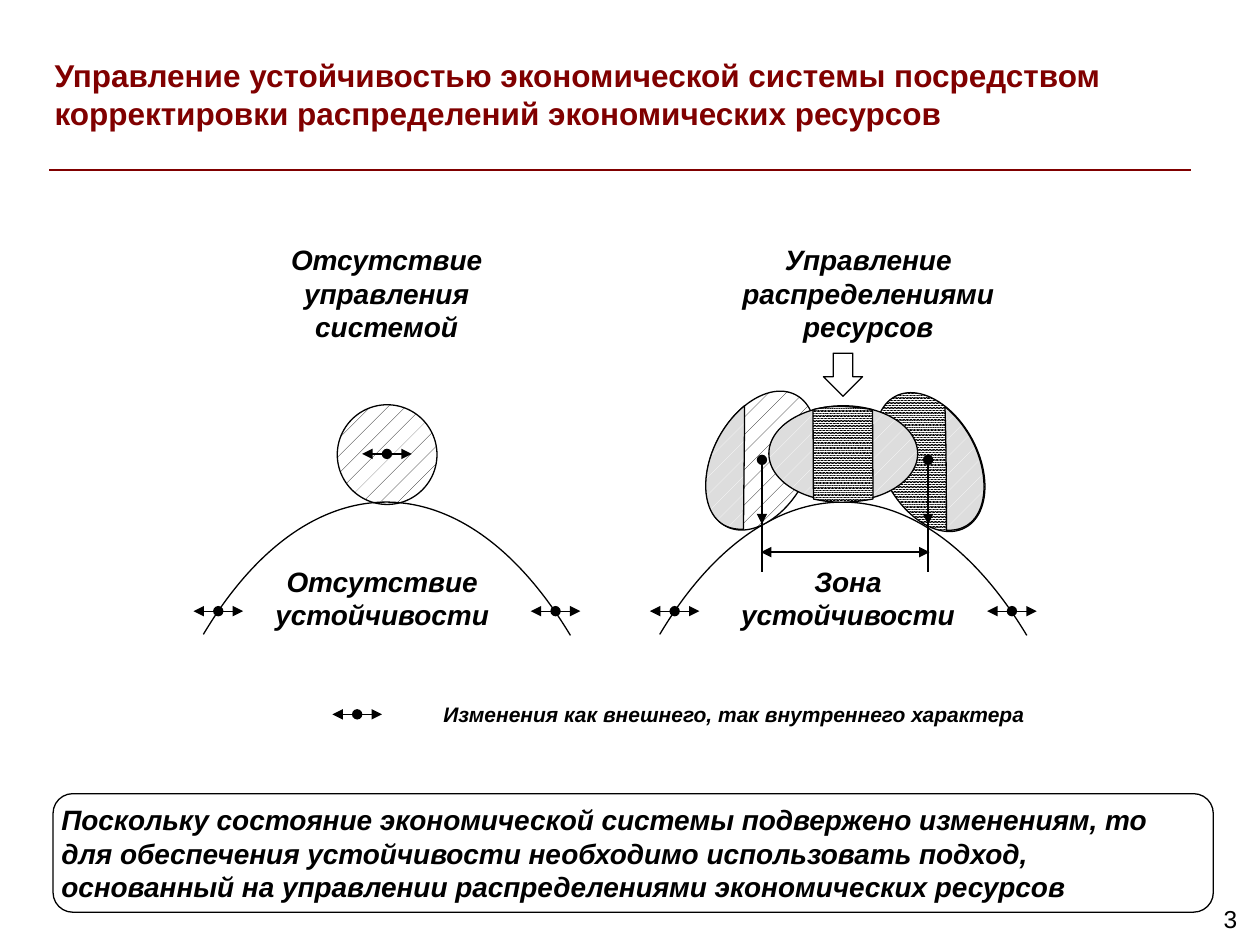
from lxml import etree
from pptx import Presentation
from pptx.dml.color import RGBColor
from pptx.enum.dml import MSO_PATTERN
from pptx.enum.shapes import MSO_CONNECTOR, MSO_SHAPE
from pptx.enum.text import MSO_ANCHOR, PP_ALIGN
from pptx.oxml.ns import qn
from pptx.util import Cm, Pt

C = {"title": "800000", "ink": "000000", "paper": "FFFFFF", "grey": "DDDDDD"}
C = {name: RGBColor.from_string(value) for name, value in C.items()}
STYLES = {
    "light": (MSO_PATTERN.PERCENT_5, "ink", "paper"),
    "dark": (MSO_PATTERN.PERCENT_90, "paper", "ink"),
    "grey": (MSO_PATTERN.PERCENT_5, "paper", "grey"),
}


def finish(sp, style=None):
    sp.shadow.inherit = False
    sp.line.color.rgb = C["ink"]
    sp.line.width = Pt(0.75)
    if style:
        pattern, fore, back = STYLES[style]
        sp.fill.patterned()
        sp.fill.pattern = pattern
        sp.fill.fore_color.rgb = C[fore]
        sp.fill.back_color.rgb = C[back]
    else:
        sp.fill.background()


def add_line(x1, y1, x2, y2, color="ink", width=0.75, head=None, tail=None):
    ln = s.shapes.add_connector(MSO_CONNECTOR.STRAIGHT, Cm(x1), Cm(y1), Cm(x2), Cm(y2))
    ln.line.color.rgb = C[color]
    ln.line.width = Pt(width)
    for tag, kind in (("a:headEnd", head), ("a:tailEnd", tail)):
        if kind:
            etree.SubElement(ln.line._get_or_add_ln(), qn(tag), type=kind)
    etree.SubElement(ln._element.spPr, qn("a:effectLst"))


prs = Presentation()
prs.slide_width, prs.slide_height = Cm(25.4), Cm(19.05)
s = prs.slides.add_slide(prs.slide_layouts[6])

add_line(0.99, 3.43, 24, 3.43, "title", 1.5)

ellipses = [
    (17.25, 8.35, 3, 1.93, 62, "dark"),
    (6.8, 8.16, 2.01, 2.01, 0, "light"),
    (13.84, 8.32, 3, 1.93, 298, "light"),
    (15.5, 8.18, 3, 1.93, 0, "grey"),
]
hills = [
    (None, (x, 12.79), [[(x + 2.1, 9.27), (x + 5.22, 9.19), (x + 7.4, 12.81)]])
    for x in (4.1, 13.3)
]
bands = [
    ("dark", (16.39, 8.26), [
        [(16.79, 8.15), (17.22, 8.2), (17.59, 8.26)],
        [(17.6, 10.06)],
        [(17.2, 10.13), (16.84, 10.16), (16.4, 10.06)],
        [(16.39, 8.26)]]),
    ("grey", (19.05, 8.2), [
        [(19.08, 9.04), (19.08, 10.11), (19.08, 10.69)],
        [(20.12, 10.74), (20.07, 9.04), (19.05, 8.2)]]),
    ("grey", (15.01, 8.18), [
        [(15.01, 8.99), (14.99, 10.08), (14.99, 10.67)],
        [(13.94, 10.72), (14, 9.02), (15.01, 8.18)]]),
]

for item in ellipses[:2] + hills + ellipses[2:] + bands:
    if item in ellipses:
        x, y, w, h, angle, style = item
        sp = s.shapes.add_shape(MSO_SHAPE.OVAL, Cm(x), Cm(y), Cm(w), Cm(h))
        sp.rotation = angle
    else:
        style, start, segments = item
        fb = s.shapes.build_freeform(Cm(start[0]), Cm(start[1]))
        points = [(Cm(x), Cm(y)) for segment in segments for x, y in segment]
        fb.add_line_segments(points, close=style is not None)
        sp = fb.convert_to_shape()
        steps = iter(list(sp._element.iter(qn("a:lnTo"))))
        for segment in segments:
            group = [next(steps) for _ in segment]
            if len(group) == 3:
                curve = etree.Element(qn("a:cubicBezTo"))
                group[0].addprevious(curve)
                for step in group:
                    curve.append(step[0])
                    step.getparent().remove(step)
    finish(sp, style)

sp = s.shapes.add_shape(MSO_SHAPE.DOWN_ARROW, Cm(16.6), Cm(7.12), Cm(0.79), Cm(0.87))
finish(sp)

for x in (15.36, 18.71):
    add_line(x, 9.27, x, 10.57, width=1.5, head="oval", tail="triangle")
    add_line(x, 10.52, x, 11.53)
add_line(15.34, 11.13, 18.74, 11.13, head="triangle", tail="triangle")

for x, y in [(7.8, 9.15), (11.2, 12.32), (4.4, 12.32), (20.4, 12.32), (13.6, 12.32), (7.2, 14.4)]:
    add_line(x, y, x + 0.5, y, head="oval", tail="triangle")
    add_line(x, y, x - 0.5, y, tail="triangle")

box = s.shapes.add_shape(MSO_SHAPE.ROUNDED_RECTANGLE, Cm(1.07), Cm(16), Cm(23.39), Cm(2.39))
finish(box)

left, center, right = PP_ALIGN.LEFT, PP_ALIGN.CENTER, PP_ALIGN.RIGHT
top, middle = MSO_ANCHOR.TOP, MSO_ANCHOR.MIDDLE
texts = [
    ((1, 1, 21.89, 2.39), ["Управление устойчивостью экономической системы посредством корректировки распределений экономических ресурсов"],
     18, "title", True, False, left, top, (0.1, 0.13, 0.05, 0.13)),
    ((22.55, 18.09, 2.64, 0.97), ["3"], 14, "ink", False, False, right, top, (0.25, 0.13, 0.25, 0.13)),
    (None, ["Поскольку состояние экономической системы подвержено изменениям, то для обеспечения устойчивости необходимо использовать подход, основанный на управлении распределениями экономических ресурсов"],
     16, "ink", True, True, left, middle, (0.05, 0.13, 0.05, 0.13)),
]
labels = [
    ((5.6, 4.9, 4.39, 2.01), ["Отсутствие управления", "системой"], 16),
    ((14.9, 4.88, 5.21, 2.06), ["Управление", "распределениями", "ресурсов"], 16),
    ((5.51, 11.05, 4.39, 2.01), ["Отсутствие устойчивости"], 16),
    ((14.9, 11.05, 4.39, 2.01), ["Зона устойчивости"], 16),
    ((8.5, 13.92, 12.6, 0.94), ["Изменения как внешнего, так внутреннего характера"], 12),
]
texts += [(at, lines, size, "ink", True, True, center, middle, (0, 0, 0, 0)) for at, lines, size in labels]

for at, lines, size, color, bold, italic, align, anchor, margins in texts:
    sp = s.shapes.add_textbox(*[Cm(v) for v in at]) if at else box
    tf = sp.text_frame
    tf.word_wrap = True
    tf.vertical_anchor = anchor
    tf.margin_left, tf.margin_top, tf.margin_right, tf.margin_bottom = [Cm(v) for v in margins]
    for i, line in enumerate(lines):
        p = tf.add_paragraph() if i else tf.paragraphs[0]
        p.alignment = align
        r = p.add_run()
        r.text = line
        r.font.name = "Arial"
        r.font.size = Pt(size)
        r.font.bold = bold
        r.font.italic = italic
        r.font.color.rgb = C[color]

prs.save("out.pptx")
